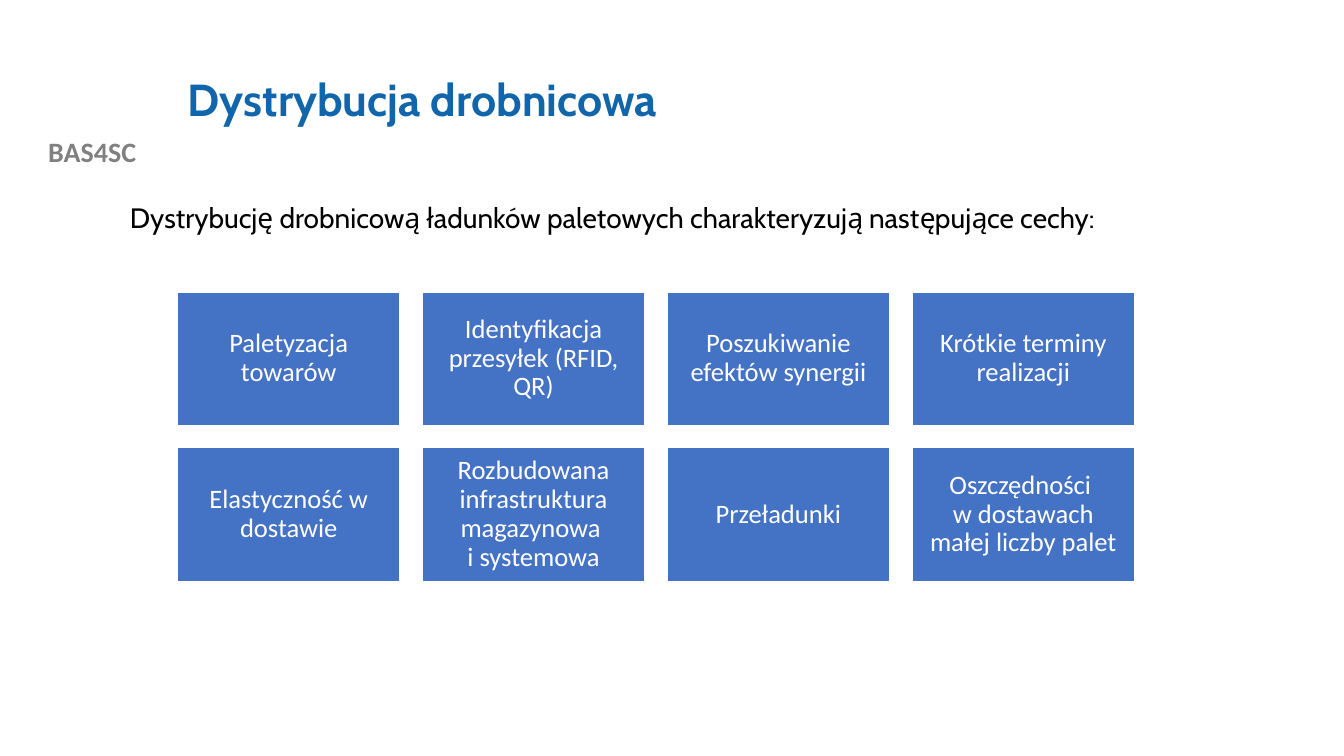
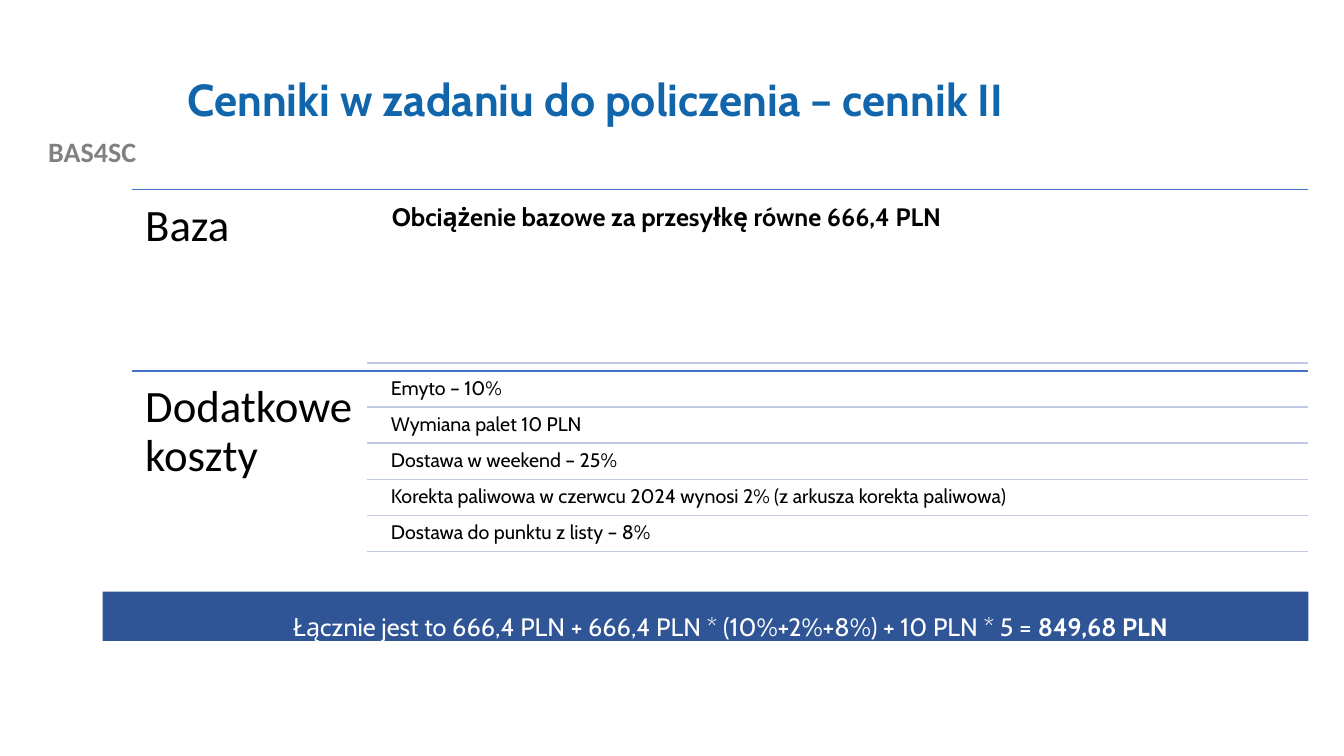
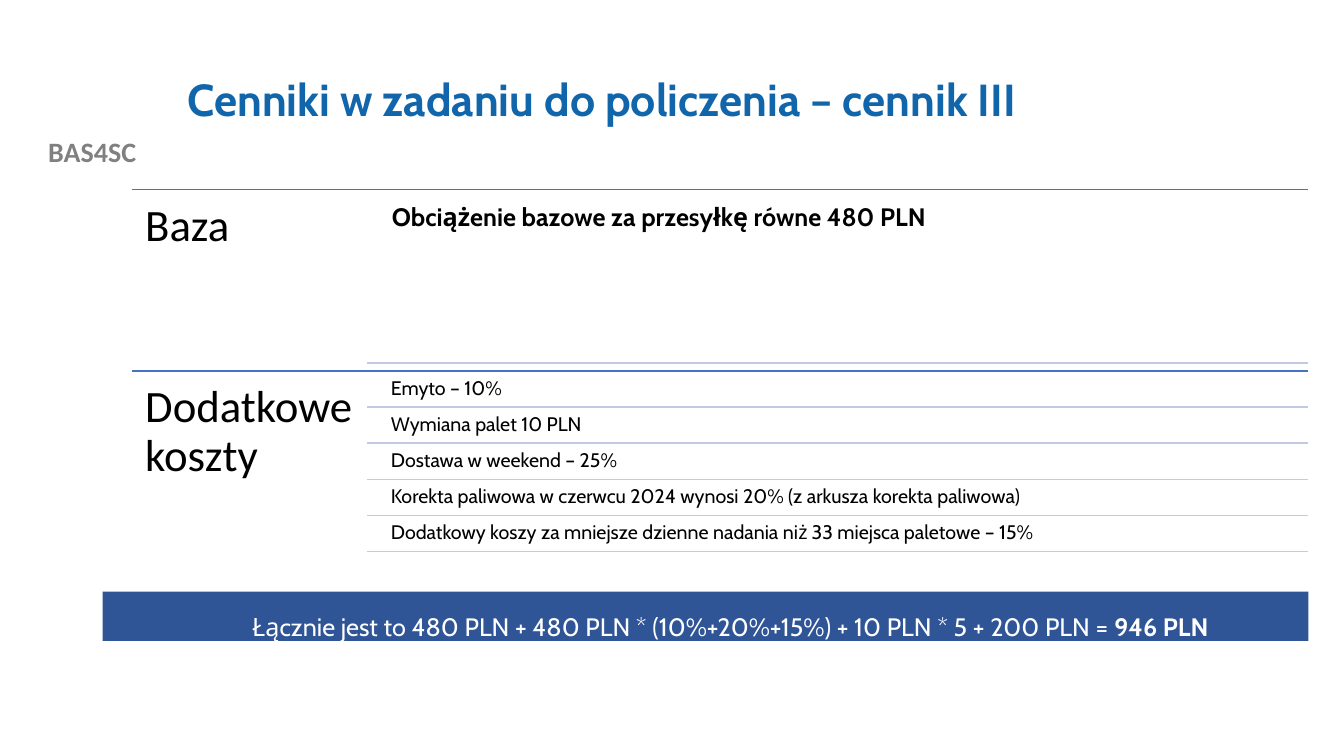
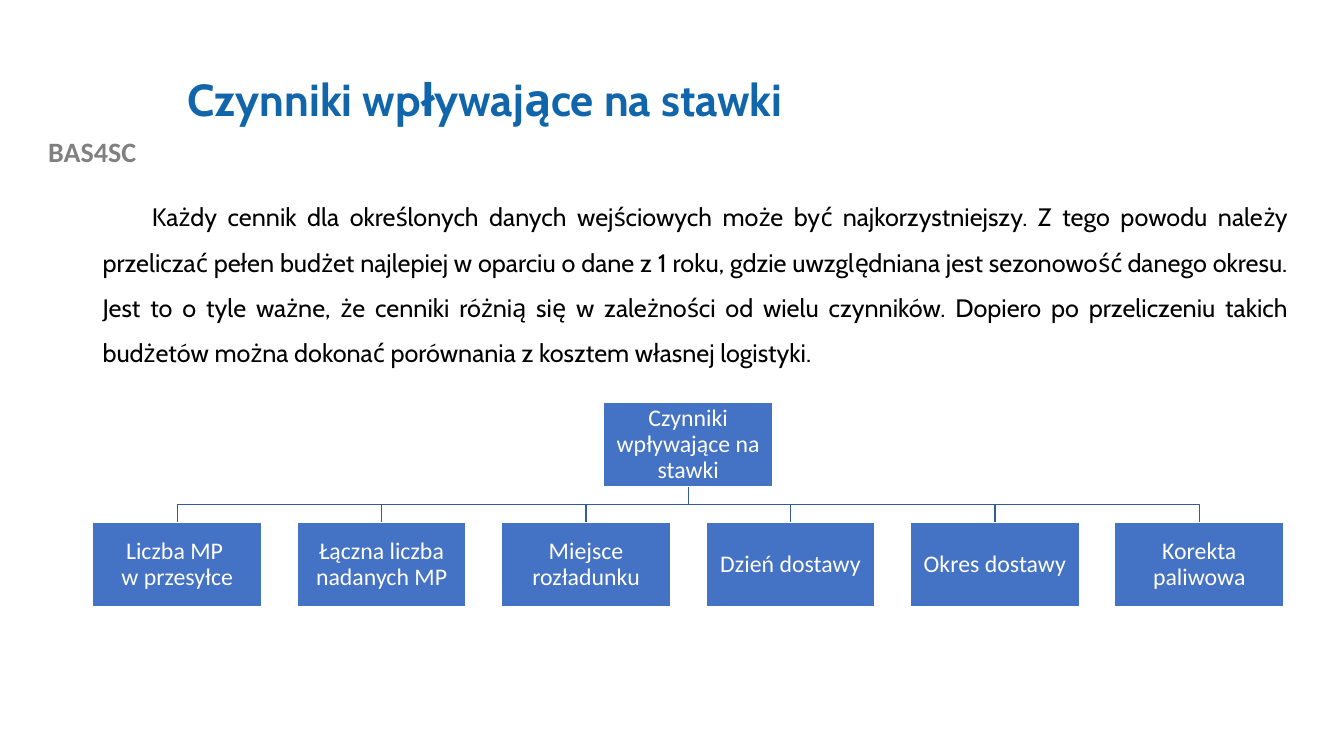
import dataclasses

import pptx
import pptx.dml.color
import pptx.enum.shapes
import pptx.enum.text
import pptx.util

Pt = pptx.util.Pt
Align = pptx.enum.text.PP_ALIGN
Anchor = pptx.enum.text.MSO_ANCHOR
RECT = pptx.enum.shapes.MSO_SHAPE.RECTANGLE
STRAIGHT = pptx.enum.shapes.MSO_CONNECTOR.STRAIGHT


def hue(code):
    """Turn a hex code into a colour."""
    return pptx.dml.color.RGBColor.from_string(code)


@dataclasses.dataclass(frozen=True)
class Theme:
    """Colours, fonts and type sizes of the deck."""
    title: object = hue("1065AB")
    tag: object = hue("808080")
    text: object = hue("000000")
    white: object = hue("FFFFFF")
    box: object = hue("4472C4")
    band: object = hue("2F5597")
    rule: object = hue("C1C9E4")
    tree: object = hue("365B9D")
    head: str = "Cabin"
    body: str = "Calibri"
    big: int = 32
    lead: int = 20
    tile: int = 19
    main: int = 18
    leaf: int = 17
    small: int = 14


THEME = Theme()


def style(para, size, color, font=THEME.head, bold=False, align=Align.LEFT, lead=0.9):
    """Format a whole paragraph."""
    para.alignment = align
    para.line_spacing = lead
    para.font.size = Pt(size)
    para.font.name = font
    para.font.bold = bold
    para.font.color.rgb = color


def indent(para, size):
    """Indent the first line and leave space after the paragraph."""
    props = para._p.get_or_add_pPr()
    props.set("marL", "0")
    props.set("indent", str(Pt(size)))
    para.space_after = Pt(6)


def setup(frame, inset=None, anchor=Anchor.TOP):
    """Set wrapping, anchor and margins, and return the first paragraph."""
    frame.word_wrap = True
    frame.auto_size = pptx.enum.text.MSO_AUTO_SIZE.NONE
    frame.vertical_anchor = anchor
    if inset is not None:
        frame.margin_left = frame.margin_right = Pt(inset)
        frame.margin_top = frame.margin_bottom = Pt(inset)
    return frame.paragraphs[0]


def label(slide, area, text, size, color=THEME.text, inset=None, **look):
    """Add a text box and return its paragraph."""
    box = slide.shapes.add_textbox(*map(Pt, area))
    para = setup(box.text_frame, inset)
    para.text = text
    style(para, size, color, **look)
    return para


def block(slide, area, fill):
    """Add a plain filled rectangle."""
    shape = slide.shapes.add_shape(RECT, *map(Pt, area))
    shape.shadow.inherit = False
    shape.fill.solid()
    shape.fill.fore_color.rgb = fill
    shape.line.fill.background()
    return shape


def tile(slide, area, text, size, inset):
    """Add a blue box with a white edge and centred text."""
    shape = block(slide, area, THEME.box)
    shape.line.color.rgb = THEME.white
    shape.line.width = Pt(1)
    para = setup(shape.text_frame, inset, Anchor.MIDDLE)
    para.text = text
    style(para, size, THEME.white, THEME.body, align=Align.CENTER)


def rule(slide, left, top, color):
    """Draw a level line to the right edge of the price list."""
    line = slide.shapes.add_connector(STRAIGHT, Pt(left), Pt(top), Pt(934.6), Pt(top))
    line.line.color.rgb = color
    line.line.width = Pt(1)
    props = line._element.spPr
    props.append(props.makeelement(pptx.oxml.ns.qn("a:effectLst"), {}))


def branch(slide, start, end):
    """Draw a bent line from a parent down to a child."""
    (left, top), (right, low) = start, end
    mid = (top + low) / 2
    path = [(left, mid), (right, mid), (right, low)]
    pen = slide.shapes.build_freeform(Pt(left), Pt(top))
    pen.add_line_segments([(Pt(x), Pt(y)) for x, y in path], close=False)
    shape = pen.convert_to_shape()
    shape.shadow.inherit = False
    shape.fill.background()
    shape.line.color.rgb = THEME.tree
    shape.line.width = Pt(1)


def page(deck, text):
    """Add a slide with its title and project tag."""
    slide = deck.slides.add_slide(deck.slide_layouts[5])
    title = slide.shapes.title
    title.left, title.top, title.width, title.height = map(Pt, (126.7, 28.8, 767.5, 87.8))
    para = setup(title.text_frame, anchor=Anchor.MIDDLE)
    para.text = text
    style(para, THEME.big, THEME.title, bold=True)
    label(slide, (0, 92.2, 131.8, 31.5), "BAS4SC", THEME.lead, THEME.tag,
          font=THEME.body, bold=True, align=Align.CENTER, lead=1.0)
    return slide


def grid(slide, texts, cols=4):
    """Lay out tiles in rows."""
    wide, high, gap = 159, 95.4, 15.9
    for i, text in enumerate(texts):
        row, col = divmod(i, cols)
        area = (126.7 + col * (wide + gap), 208.5 + row * (high + gap), wide, high)
        tile(slide, area, text, THEME.tile, 5.8)


def prices(deck, title, base, costs, total, result):
    """Build a price list slide with its total band."""
    slide = page(deck, title)
    band = block(slide, (73.4, 422.6, 861.2, 35.3), THEME.band)
    para = setup(band.text_frame)
    indent(para, 35.3)
    para.add_run().text = total
    strong = para.add_run()
    strong.text = result
    style(para, THEME.main, THEME.white, align=Align.CENTER, lead=1.5)
    strong.font.bold = True

    left, inner, top, high = 94.3, 262.1, 135.4, 129.6
    for i, name in enumerate(("Baza", "Dodatkowe koszty")):
        edge = top + i * high
        rule(slide, left, edge, THEME.box)
        label(slide, (left, edge, 168, high), name, THEME.big, inset=9.4, font=THEME.body)

    label(slide, (275, 141.1, 659.6, 118.1), base, THEME.main, inset=5, bold=True)
    rule(slide, inner, 259.2, THEME.rule)
    step = 25.76
    for i, cost in enumerate(costs):
        edge = 266.3 + i * step
        label(slide, (275, edge, 659.6, 24.5), cost, THEME.small, inset=4.2)
        rule(slide, inner, edge + 24.5, THEME.rule)


def tree(slide, root, leaves):
    """Draw a root box above a row of leaf boxes."""
    left, step, wide, high, top, low = 66.3, 146, 120.7, 60.3, 287.4, 373.1
    half = wide / 2
    mid = left + half + step * (len(leaves) - 1) / 2
    for i in range(len(leaves)):
        branch(slide, (mid, top + high), (left + half + i * step, low))
    tile(slide, (mid - half, top, wide, high), root, THEME.leaf, 0.9)
    for i, leaf in enumerate(leaves):
        tile(slide, (left + i * step, low, wide, high), leaf, THEME.leaf, 0.9)


def main():
    """Build the deck and save it."""
    deck = pptx.Presentation()
    deck.slide_width, deck.slide_height = Pt(960), Pt(540)

    slide = page(deck, "Dystrybucja drobnicowa")
    label(slide, (85.7, 142.6, 828, 316.8),
          "Dystrybucję drobnicową ładunków paletowych charakteryzują następujące cechy:",
          THEME.lead)
    grid(slide, [
        "Paletyzacja towarów", "Identyfikacja przesyłek (RFID, QR)",
        "Poszukiwanie efektów synergii", "Krótkie terminy realizacji",
        "Elastyczność w dostawie",
        "Rozbudowana infrastruktura magazynowa \ni systemowa",
        "Przeładunki", "Oszczędności \nw dostawach małej liczby palet"])

    shared = ["Emyto – 10%", "Wymiana palet 10 PLN", "Dostawa w weekend – 25%"]
    prices(deck, "Cenniki w zadaniu do policzenia – cennik II",
           "Obciążenie bazowe za przesyłkę równe 666,4 PLN",
           shared + ["Korekta paliwowa w czerwcu 2024 wynosi 2% (z arkusza korekta paliwowa)",
                     "Dostawa do punktu z listy – 8%"],
           "Łącznie jest to 666,4 PLN + 666,4 PLN * (10%+2%+8%) + 10 PLN * 5 = ",
           "849,68 PLN")
    prices(deck, "Cenniki w zadaniu do policzenia – cennik III",
           "Obciążenie bazowe za przesyłkę równe 480 PLN",
           shared + ["Korekta paliwowa w czerwcu 2024 wynosi 20% (z arkusza korekta paliwowa)",
                     "Dodatkowy koszy za mniejsze dzienne nadania niż 33 miejsca paletowe – 15%"],
           "Łącznie jest to 480 PLN + 480 PLN * (10%+20%+15%) + 10 PLN * 5 + 200 PLN = ",
           "946 PLN")

    slide = page(deck, "Czynniki wpływające na stawki")
    para = label(
        slide, (66.2, 129.6, 861.1, 133.9),
        "Każdy cennik dla określonych danych wejściowych może być najkorzystniejszy. "
        "Z tego powodu należy przeliczać pełen budżet najlepiej w oparciu o dane z 1 roku, "
        "gdzie uwzględniana jest sezonowość danego okresu. Jest to o tyle ważne, że cenniki "
        "różnią się w zależności od wielu czynników. Dopiero po przeliczeniu takich budżetów "
        "można dokonać porównania z kosztem własnej logistyki.",
        THEME.main, align=Align.JUSTIFY, lead=1.5)
    indent(para, 35.3)
    tree(slide, "Czynniki wpływające na stawki", [
        "Liczba MP \nw przesyłce", "Łączna liczba nadanych MP", "Miejsce rozładunku",
        "Dzień dostawy", "Okres dostawy", "Korekta paliwowa"])

    deck.save("out.pptx")


if __name__ == "__main__":
    main()
